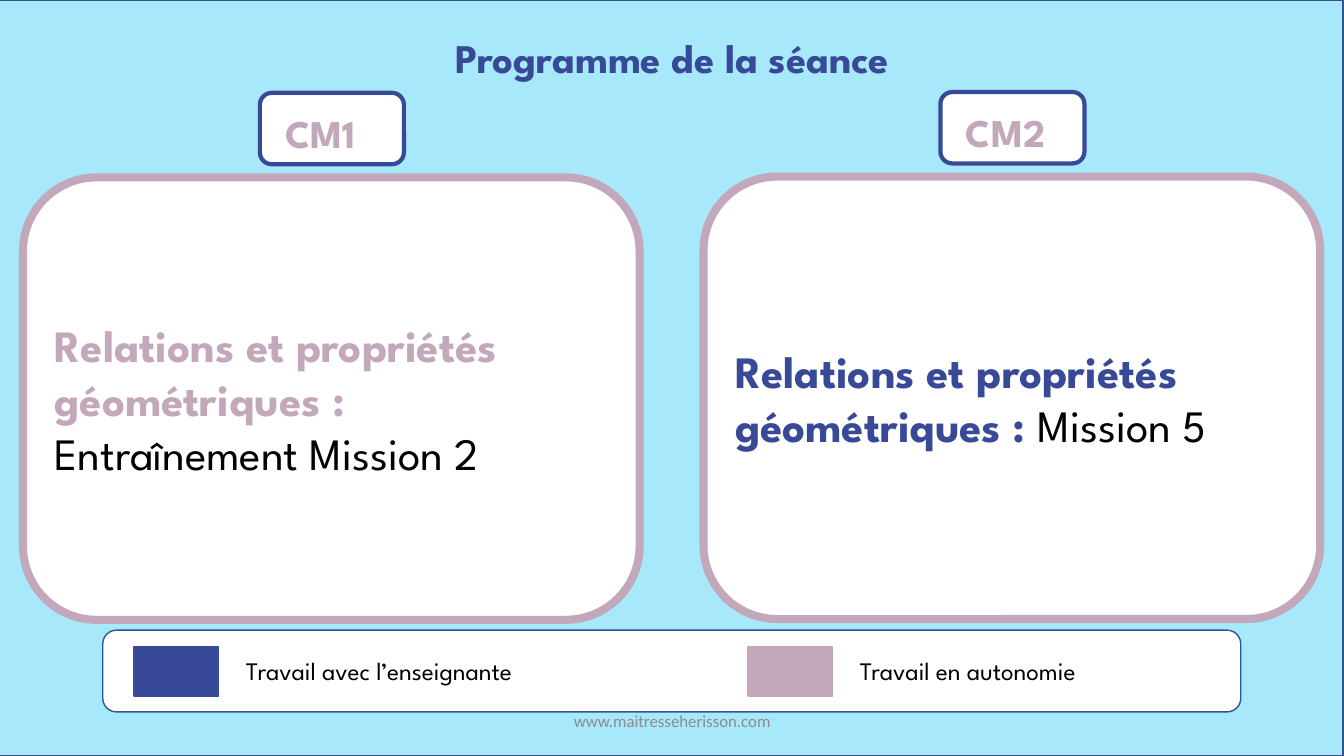
from pptx import Presentation
from pptx.dml.color import RGBColor
from pptx.enum import shapes, text
from pptx.util import Cm, Pt

COLORS = {
    "sky": "A7E8FB",
    "edge": "325491",
    "teacher": "374997",
    "solo": "C3A7BA",
    "white": "FFFFFF",
    "black": "000000",
    "grey": "8C8C8C",
}
SPARTAN = "League Spartan"
RECT = shapes.MSO_SHAPE.RECTANGLE
ROUND = shapes.MSO_SHAPE.ROUNDED_RECTANGLE


def color(name):
    return RGBColor.from_string(COLORS[name])


def add_panel(page, kind, box, fill, line, weight):
    panel = page.shapes.add_shape(kind, *map(Cm, box))
    panel.shadow.inherit = False
    panel.fill.solid()
    panel.fill.fore_color.rgb = color(fill)
    panel.line.color.rgb = color(line)
    panel.line.width = Pt(weight)
    return panel


def style(font, size, ink, bold=False, name=SPARTAN):
    font.name = name
    font.size = Pt(size)
    font.bold = bold
    font.color.rgb = color(ink)


def add_label(page, box, words, size, ink, bold=False, name=SPARTAN):
    label = page.shapes.add_textbox(*map(Cm, box))
    label.text_frame.word_wrap = True
    para = label.text_frame.paragraphs[0]
    para.text = words
    style(para.font, size, ink, bold, name)
    return label


def add_title(page, box):
    title = page.shapes.title
    title.left, title.top, title.width, title.height = map(Cm, box)
    frame = title.text_frame
    frame.auto_size = text.MSO_AUTO_SIZE.NONE
    frame.vertical_anchor = text.MSO_ANCHOR.TOP
    para = frame.paragraphs[0]
    para.text = "Programme de la séance"
    para.alignment = text.PP_ALIGN.CENTER
    style(para.font, 29, "teacher", True)
    title.element.getparent().append(title.element)


def add_level(page, box, level, paragraphs):
    left, top, width, height = box
    chip_left, chip_top = left + 5.97, top - 2.13
    add_panel(page, ROUND, (chip_left, chip_top, 3.63, 1.8), "white", "teacher", 3)
    add_label(page, (chip_left + 0.39, chip_top + 0.28, 2.79, 1.45), level, 28, "solo", True)

    card = add_panel(page, ROUND, box, "white", "solo", 5.75)
    frame = card.text_frame
    frame.word_wrap = True
    frame.vertical_anchor = text.MSO_ANCHOR.MIDDLE
    for index, spans in enumerate(paragraphs):
        para = frame.add_paragraph() if index else frame.paragraphs[0]
        para.alignment = text.PP_ALIGN.LEFT
        for words, ink, bold in spans:
            span = para.add_run()
            span.text = words
            style(span.font, 32, ink, bold)


def add_legend(page, box):
    left, top, width, height = box
    add_panel(page, ROUND, box, "white", "edge", 1)
    entries = [("teacher", "Travail avec l’enseignante"), ("solo", "Travail en autonomie")]
    for index, (ink, words) in enumerate(entries):
        swatch_left = left + 0.79 + index * 15.47
        add_panel(page, RECT, (swatch_left, top + 0.42, 2.13, 1.24), ink, ink, 1)
        add_label(page, (swatch_left + 2.57, top + 0.51, 8.69, 1.02), words, 18, "black")


def add_footer(page, box):
    footer = add_label(page, box, "www.maitresseherisson.com", 12, "grey", name="Calibri")
    footer.text_frame.vertical_anchor = text.MSO_ANCHOR.MIDDLE
    footer.text_frame.paragraphs[0].alignment = text.PP_ALIGN.CENTER


def main():
    deck = Presentation()
    deck.slide_width, deck.slide_height = Cm(33.87), Cm(19.05)
    page = deck.slides.add_slide(deck.slide_layouts[5])

    add_panel(page, RECT, (-0.02, 0, 33.87, 19.05), "sky", "edge", 1)
    add_title(page, (0.02, 0.69, 33.87, 1.5))
    add_level(page, (0.58, 4.47, 15.54, 11.15), "CM1", [
        [("Relations et propriétés géométriques :", "solo", True)],
        [("Entraînement Mission 2", "black", False)],
    ])
    add_level(page, (17.73, 4.45, 15.54, 11.15), "CM2", [
        [("Relations et propriétés géométriques : ", "teacher", True),
         ("Mission 5", "black", False)],
    ])
    add_legend(page, (2.59, 15.88, 28.68, 2.06))
    add_footer(page, (11.23, 17.65, 11.43, 1.02))
    deck.save("out.pptx")


if __name__ == "__main__":
    main()
